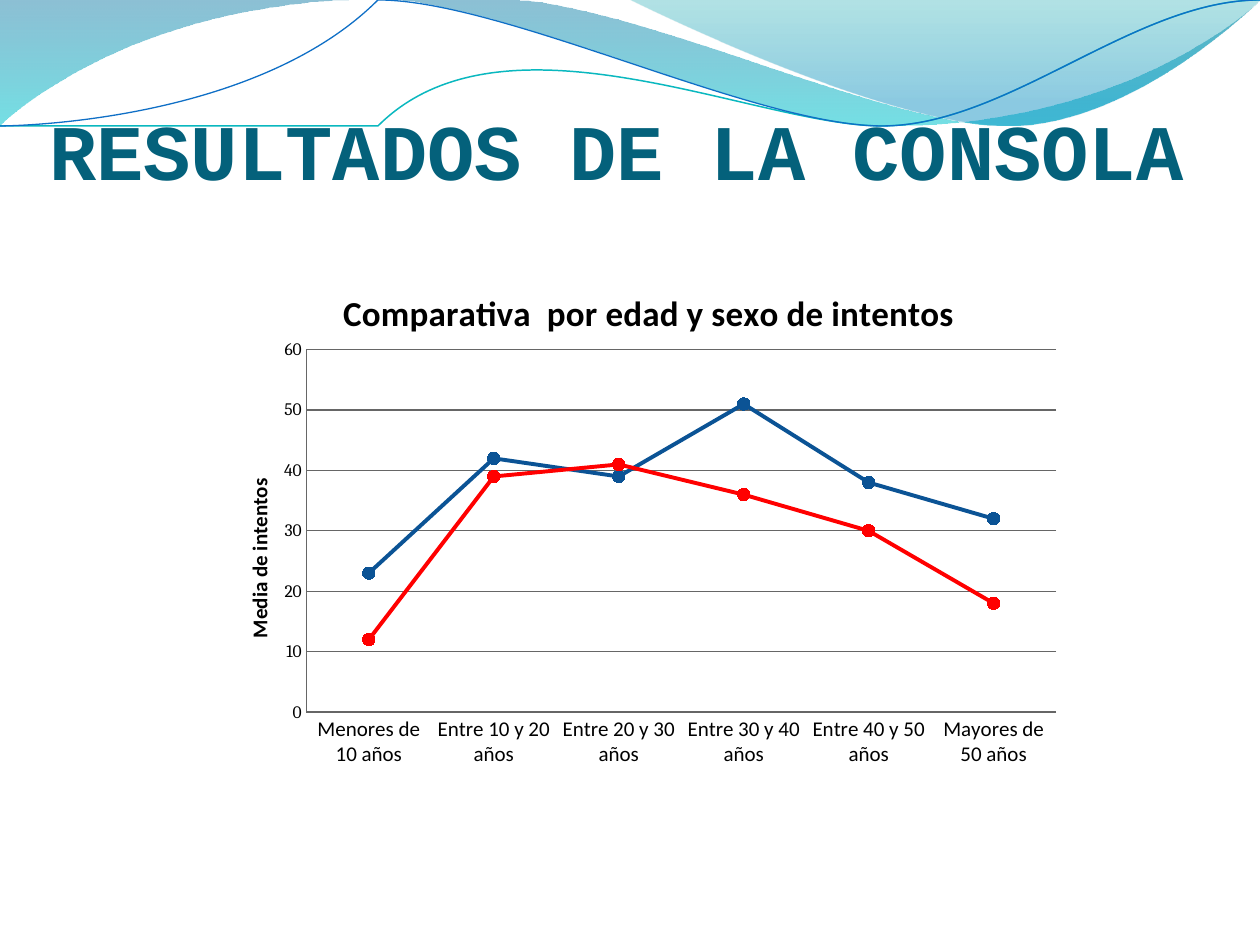
import pptx
import pptx.chart.data
import pptx.dml.color
import pptx.enum.chart
import pptx.enum.text
import pptx.oxml
import pptx.oxml.ns
import pptx.util

Inches, Pt = pptx.util.Inches, pptx.util.Pt
qn = pptx.oxml.ns.qn
WIDTH, HEIGHT = 10, 7.5
COLORS = {"title": "04617B", "text": "000000", "grid": "666666",
          "men": "0B5395", "women": "FF0000"}
TITLE = "RESULTADOS DE LA CONSOLA"
CHART_TITLE = "Comparativa  por edad y sexo de intentos"
AXIS_TITLE = "Media de intentos"
AGES = ["Menores de 10 años", "Entre 10 y 20 años", "Entre 20 y 30 años",
        "Entre 30 y 40 años", "Entre 40 y 50 años", "Mayores de 50 años"]
SERIES = [("Series 1", [23, 42, 39, 51, 38, 32], "men"),
          ("Series 2", [12, 39, 41, 36, 30, 18], "women")]

# Outlines in inches: a pair is a line or start point, a triple of pairs is a curve.
# Gradient stops are (position %, colour, opacity %).
BANDS = [
    ([(0, 0), (4.4, -0.01),
      ((4.76, 0.17), (6.64, 0.63), (7.58, 0.63)),
      ((8.53, 0.63), (9.58, 0.26), (10, 0.09)), (10.01, 0.36),
      ((9.83, 0.44), (8.7, 0.76), (7.46, 0.75)),
      ((6.22, 0.75), (3.82, 0.28), (2.57, 0.34)),
      ((1.29, 0.36), (0.46, 0.83), (-0.01, 1.13))],
     [(0, "0074A1", 45), (100, "00C6CF", 55)]),
    ([(4.79, -0.01),
      ((5.09, 0.11), (6.82, 0.62), (7.69, 0.65)),
      ((8.56, 0.69), (9.61, 0.32), (10, 0.21)), (10, 0)],
     [(0, "00A1A9", 30), (80, "008BBF", 45)]),
]
WAVES = [
    ([(0, 1.11), ((0.48, 0.93), (1.58, 0.57), (2.77, 0.52)),
      ((3.95, 0.47), (5.93, 0.89), (7.13, 0.8)),
      ((8.33, 0.71), (9.38, 0.15), (9.98, -0.02))], "0AB8BF", 0.85),
    ([(0, 1.04), ((0.47, 0.96), (1.64, 0.61), (2.83, 0.56)),
      ((4.03, 0.51), (5.97, 0.84), (7.17, 0.75)),
      ((8.36, 0.67), (9.41, 0.21), (10, 0.06))], "0F6FC6", 0.75),
]


def rgb(value):
    return pptx.dml.color.RGBColor.from_string(value)


def add_outline(page, steps, closed):
    """Build a freeform through the end points, then bend its curved segments."""
    ends = [step[-1] if isinstance(step[0], tuple) else step for step in steps]
    builder = page.shapes.build_freeform(*ends[0], scale=Inches(1))
    builder.add_line_segments(ends[1:], close=closed)
    shape = builder.convert_to_shape()
    shape.shadow.inherit = False
    outline = shape._element.spPr.find(".//" + qn("a:path"))
    left, top = (min(axis) for axis in zip(*ends))
    for segment, step in zip(outline.findall(qn("a:lnTo")), steps[1:]):
        if not isinstance(step[0], tuple):
            continue
        curve = outline.makeelement(qn("a:cubicBezTo"), {})
        for x, y in step:
            point = curve.makeelement(qn("a:pt"), {})
            scale = int(outline.get("w")) / (max(end[0] for end in ends) - left)
            point.set("x", str(round((x - left) * scale)))
            point.set("y", str(round((y - top) * scale)))
            curve.append(point)
        outline.replace(segment, curve)
    return shape


def fill_gradient(shape, stops):
    """Fill from top to bottom with partly transparent stops."""
    marks = "".join(
        f'<a:gs pos="{place * 1000}"><a:srgbClr val="{color}">'
        f'<a:alpha val="{opacity * 1000}"/></a:srgbClr></a:gs>'
        for place, color, opacity in stops)
    gradient = pptx.oxml.parse_xml(
        f'<a:gradFill {pptx.oxml.ns.nsdecls("a")}><a:gsLst>{marks}</a:gsLst>'
        '<a:lin ang="5400000" scaled="0"/></a:gradFill>')
    shape._element.spPr.find(qn("a:custGeom")).addnext(gradient)


def set_font(font, name, size, color, bold=False):
    font.name, font.size, font.bold = name, Pt(size), bold
    font.color.rgb = rgb(COLORS[color])


def place_part(parent, index, **shares):
    """Fix a chart part at shares of the chart's size."""
    for old in parent.findall(qn("c:layout")):
        parent.remove(old)
    target = '<c:layoutTarget val="inner"/>' if "w" in shares else ""
    modes = "".join(f'<c:{key}Mode val="edge"/>' for key in "xy")
    sizes = "".join(f'<c:{key} val="{share}"/>' for key, share in shares.items())
    parent.insert(index, pptx.oxml.parse_xml(
        f'<c:layout {pptx.oxml.ns.nsdecls("c")}><c:manualLayout>'
        f'{target}{modes}{sizes}</c:manualLayout></c:layout>'))


def write_chart_title(title, text, size, x, y):
    span = title.text_frame.paragraphs[0].add_run()
    span.text = text
    set_font(span.font, "Calibri", size, "text", True)
    place_part(title._element, 1, x=x, y=y)


def add_line_chart(page):
    data = pptx.chart.data.CategoryChartData(number_format="0")
    data.categories = AGES
    for name, values, _ in SERIES:
        data.add_series(name, values)
    chart = page.shapes.add_chart(
        pptx.enum.chart.XL_CHART_TYPE.LINE_MARKERS, Inches(1.64), Inches(2.03),
        Inches(6.88), Inches(4.14), data).chart
    chart.has_legend = False
    set_font(chart.font, "Cambria", 10, "text")
    chart.has_title = True
    write_chart_title(chart.chart_title, CHART_TITLE, 20, 0.15, 0.05)

    ages, means = chart.category_axis, chart.value_axis
    for axis in (ages, means):
        axis.major_tick_mark = pptx.enum.chart.XL_TICK_MARK.NONE
        axis.format.line.color.rgb = rgb(COLORS["grid"])
        axis.format.line.width = Pt(0.75)
    set_font(ages.tick_labels.font, "Calibri", 12, "text")
    set_font(means.tick_labels.font, "Cambria", 10, "text")
    means.minimum_scale, means.maximum_scale, means.major_unit = 0, 60, 10
    means.has_major_gridlines = True
    means.major_gridlines.format.line.color.rgb = rgb(COLORS["grid"])
    means.major_gridlines.format.line.width = Pt(0.75)
    means.has_title = True
    write_chart_title(means.axis_title, AXIS_TITLE, 12, 0.04, 0.42)

    plot = chart.plots[0]
    plot.vary_by_categories = False
    for series, (_, _, key) in zip(plot.series, SERIES):
        color = rgb(COLORS[key])
        series.smooth = False
        series.format.line.color.rgb = color
        series.format.line.width = Pt(2.25)
        series.marker.style = pptx.enum.chart.XL_MARKER_STYLE.CIRCLE
        series.marker.size = 7
        series.marker.format.fill.solid()
        series.marker.format.fill.fore_color.rgb = color
        series.marker.format.line.color.rgb = color
    place_part(chart._chartSpace.find(".//" + qn("c:plotArea")), 0,
               x=0.115, y=0.18, w=0.865, h=0.695)


def add_title(page):
    box = page.shapes.add_textbox(Inches(0.39), Inches(0.77), Inches(9.22), Inches(0.79))
    frame = box.text_frame
    frame.word_wrap = True
    frame.vertical_anchor = pptx.enum.text.MSO_ANCHOR.BOTTOM
    frame.margin_left = frame.margin_right = frame.margin_bottom = 0
    frame.margin_top = Inches(0.05)
    span = frame.paragraphs[0].add_run()
    span.text = TITLE
    set_font(span.font, "Courier New", 45, "title", True)


def main():
    deck = pptx.Presentation()
    deck.slide_width, deck.slide_height = Inches(WIDTH), Inches(HEIGHT)
    page = deck.slides.add_slide(deck.slide_layouts[6])
    for steps, stops in BANDS:
        band = add_outline(page, steps, closed=True)
        fill_gradient(band, stops)
        band.line.fill.background()
    for steps, color, width in WAVES:
        wave = add_outline(page, steps, closed=False)
        wave.fill.background()
        wave.line.color.rgb = rgb(color)
        wave.line.width = Pt(width)
    add_title(page)
    add_line_chart(page)
    deck.save("out.pptx")


if __name__ == "__main__":
    main()
